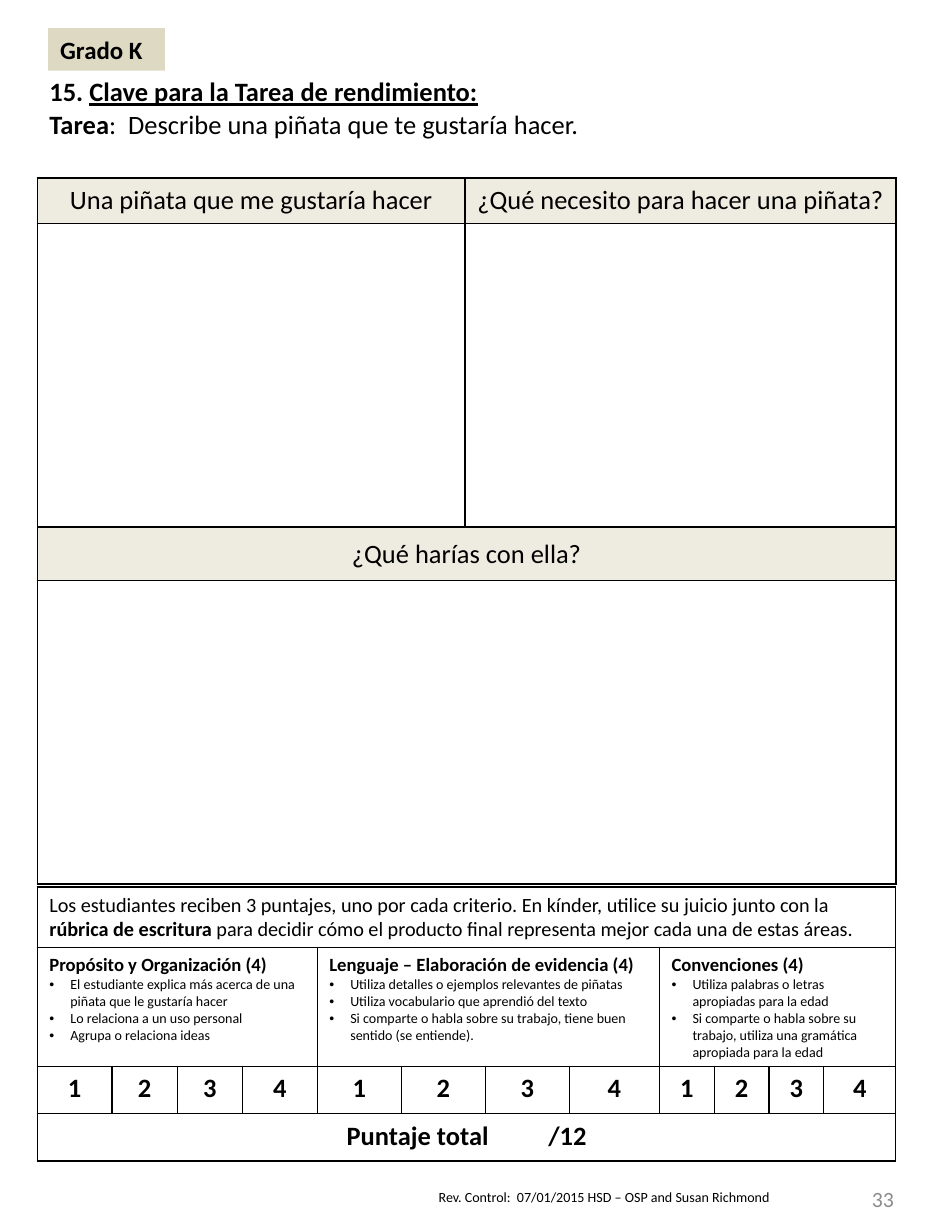
from dataclasses import dataclass
from itertools import product

from lxml import etree
from pptx import Presentation
from pptx import util as u
from pptx.dml import color
from pptx.enum import shapes, text
from pptx.oxml import ns


@dataclass(frozen=True)
class Theme:
    font: str = "Calibri"
    black: str = "000000"
    grey: str = "8C8C8C"
    white: str = "FFFFFF"
    cream: str = "EEECE1"
    tan: str = "DDD9C3"
    large: int = 17
    badge: int = 16
    number: int = 14
    body: int = 13
    heading: int = 12
    small: int = 9


THEME = Theme()
LEFT, CENTER, RIGHT = text.PP_ALIGN.LEFT, text.PP_ALIGN.CENTER, text.PP_ALIGN.RIGHT
TOP, MIDDLE = text.MSO_ANCHOR.TOP, text.MSO_ANCHOR.MIDDLE
ALL_SIDES = "LRTB"
SIDE_INSET, CELL_INSET, BOX_INSET = 7.75, 3.88, 4.1
BULLET_INDENT = 13.5
TOTAL_GAP = 34.5

CRITERIA = [
    ("Propósito y Organización (4)", [
        "El estudiante explica más acerca de una piñata que le gustaría hacer",
        "Lo relaciona a un uso personal",
        "Agrupa o relaciona ideas"]),
    ("Lenguaje – Elaboración de evidencia (4)", [
        "Utiliza detalles o ejemplos relevantes de piñatas",
        "Utiliza vocabulario que aprendió del texto",
        "Si comparte o habla sobre su trabajo, tiene buen sentido (se entiende)."]),
    ("Convenciones (4)", [
        "Utiliza palabras o letras apropiadas para la edad",
        "Si comparte o habla sobre su trabajo, utiliza una gramática apropiada para la edad"]),
]
SCORES = 4


def set_fill(target, fill):
    if fill:
        target.fill.solid()
        target.fill.fore_color.rgb = color.RGBColor.from_string(fill)
    else:
        target.fill.background()


def format_span(span, size, bold=False, underline=False, ink=THEME.black):
    span.font.name = THEME.font
    span.font.size = u.Pt(size)
    span.font.bold = bold
    span.font.underline = underline
    span.font.color.rgb = color.RGBColor.from_string(ink)


def write(frame, lines, size, align=LEFT, ink=THEME.black):
    for index, line in enumerate(lines):
        para = frame.add_paragraph() if index else frame.paragraphs[0]
        para.alignment = align
        for words, style in line:
            span = para.add_run()
            span.text = words
            format_span(span, size, "b" in style, "u" in style, ink)


def add_bullets(frame, items):
    for item in items:
        para = frame.add_paragraph()
        para.text = item
        format_span(para.runs[0], THEME.small)
        properties = para._p.get_or_add_pPr()
        properties.set("marL", str(u.Pt(BULLET_INDENT)))
        properties.set("indent", str(-u.Pt(BULLET_INDENT)))
        etree.SubElement(properties, ns.qn("a:buFont"), typeface="Arial")
        etree.SubElement(properties, ns.qn("a:buChar"), char="•")


def set_insets(target, vertical):
    target.margin_left = target.margin_right = u.Pt(SIDE_INSET)
    target.margin_top = target.margin_bottom = u.Pt(vertical)


def set_borders(cell, sides):
    properties = cell._tc.get_or_add_tcPr()
    for side in ALL_SIDES:
        line = etree.SubElement(properties, ns.qn(f"a:ln{side}"), w=str(u.Pt(1)))
        if side in sides:
            fill = etree.SubElement(line, ns.qn("a:solidFill"))
            etree.SubElement(fill, ns.qn("a:srgbClr"), val=THEME.black)
        else:
            etree.SubElement(line, ns.qn("a:noFill"))


def add_grid(page, left, top, widths, heights, open_rows=()):
    frame = page.shapes.add_table(len(heights), len(widths), u.Pt(left), u.Pt(top),
                                  u.Pt(sum(widths)), u.Pt(sum(heights)))
    table = frame.table
    table.first_row = table.horz_banding = False
    for column, width in zip(table.columns, widths):
        column.width = u.Pt(width)
    for row, height in zip(table.rows, heights):
        row.height = u.Pt(height)
    for row, column in product(range(len(heights)), range(len(widths))):
        cell = table.cell(row, column)
        set_insets(cell, CELL_INSET)
        set_borders(cell, "B" if row in open_rows else ALL_SIDES)
        set_fill(cell, None)
    return table


def merge(table, row, first, last):
    cell = table.cell(row, first)
    cell.merge(table.cell(row, last))
    return cell


def fill_heading(cell, words, anchor=TOP):
    set_fill(cell, THEME.cream)
    cell.vertical_anchor = anchor
    write(cell.text_frame, [[(words, "")]], THEME.large, CENTER)


def add_text(page, left, top, width, height, words, size,
             align=LEFT, anchor=TOP, ink=THEME.black, vertical=CELL_INSET):
    box = page.shapes.add_textbox(u.Pt(left), u.Pt(top), u.Pt(width), u.Pt(height))
    frame = box.text_frame
    frame.word_wrap = True
    frame.vertical_anchor = anchor
    set_insets(frame, vertical)
    write(frame, [[(words, "")]], size, align, ink)


def add_badge(page, left, top, width, height, words):
    box = page.shapes.add_shape(shapes.MSO_SHAPE.RECTANGLE, u.Pt(left), u.Pt(top),
                                u.Pt(width), u.Pt(height))
    box.shadow.inherit = False
    box.line.fill.background()
    set_fill(box, THEME.tan)
    box.text_frame.vertical_anchor = TOP
    set_insets(box.text_frame, BOX_INSET)
    write(box.text_frame, [[(words, "b")]], THEME.badge)


def add_task_table(page):
    table = add_grid(page, 24, 45.4, [275, 277], [69, 29.5, 195, 34.5, 195], open_rows=(0,))
    task = merge(table, 0, 0, 1)
    set_fill(task, THEME.white)
    write(task.text_frame, [
        [("15. ", "b"), ("Clave para la Tarea de rendimiento:", "bu")],
        [("Tarea", "b"), (":  Describe una piñata que te gustaría hacer.", "")],
    ], THEME.large)
    fill_heading(table.cell(1, 0), "Una piñata que me gustaría hacer")
    fill_heading(table.cell(1, 1), "¿Qué necesito para hacer una piñata?")
    fill_heading(merge(table, 3, 0, 1), "¿Qué harías con ella?", MIDDLE)
    merge(table, 4, 0, 1)


def add_score_table(page):
    widths = [48, 42, 42, 48] + [54] * 3 + [58] + [35.2] * 3 + [46.4]
    table = add_grid(page, 24, 570.2, widths, [38.5, 76.5, 30.4, 30.4])
    last = len(widths) - 1
    guide = merge(table, 0, 0, last)
    guide.vertical_anchor = MIDDLE
    write(guide.text_frame, [[
        ("Los estudiantes reciben 3 puntajes, uno por cada criterio. "
         "En kínder, utilice su juicio junto con la ", ""),
        ("rúbrica de escritura ", "b"),
        ("para decidir cómo el producto final representa mejor cada una de estas áreas.", ""),
    ]], THEME.body)
    for index, (heading, items) in enumerate(CRITERIA):
        first = index * SCORES
        frame = merge(table, 1, first, first + SCORES - 1).text_frame
        write(frame, [[(heading, "b")]], THEME.heading)
        add_bullets(frame, items)
        for score in range(SCORES):
            write(table.cell(2, first + score).text_frame, [[(str(score + 1), "b")]],
                  THEME.large, CENTER)
    total = merge(table, 3, 0, last).text_frame
    write(total, [[("Puntaje total", "b"), (" ", "b"), ("/12", "b")]], THEME.large, CENTER)
    gap = total.paragraphs[0].runs[1]
    gap._r.get_or_add_rPr().set("spc", str(int(TOTAL_GAP * 100)))


def main():
    deck = Presentation()
    deck.slide_width, deck.slide_height = u.Pt(612), u.Pt(792)
    page = deck.slides.add_slide(deck.slide_layouts[6])
    add_text(page, 274.3, 760.3, 306, 18.7,
             "Rev. Control:  07/01/2015 HSD – OSP and Susan Richmond", THEME.small)
    add_text(page, 516.2, 749.5, 66.2, 42.5, "33", THEME.number,
             RIGHT, MIDDLE, THEME.grey, BOX_INSET)
    add_task_table(page)
    add_score_table(page)
    add_badge(page, 31, 18, 75, 27.4, "Grado K")
    deck.save("out.pptx")


if __name__ == "__main__":
    main()
